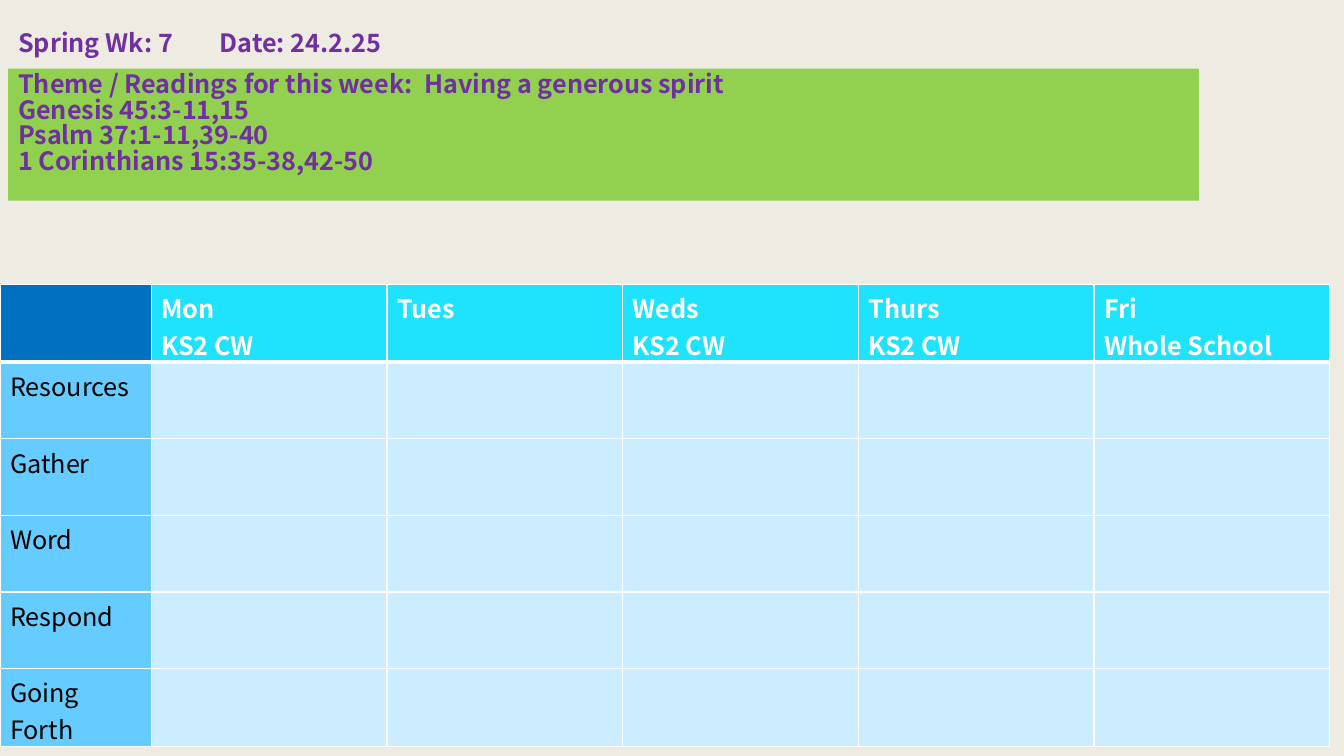
from lxml import etree
from pptx import Presentation, util as u
from pptx.dml.color import RGBColor
from pptx.enum import text as t
from pptx.oxml.ns import qn

HUES = {"page": "EEEBE2", "ink": "7030A0", "theme": "92D050", "white": "FFFFFF",
        "black": "000000", "corner": "0070C0", "day": "1FE3FD",
        "part": "66CCFF", "blank": "CCECFF"}
FONT = "Noto Sans CJK JP"
DAYS = ["Mon\nKS2 CW", "Tues", "Weds\nKS2 CW", "Thurs\nKS2 CW", "Fri\nWhole School"]
PARTS = ["Resources", "Gather", "Word", "Respond", "Going Forth"]
READINGS = ["Theme / Readings for this week:  Having a generous spirit",
            "Genesis 45:3-11,15", "Psalm 37:1-11,39-40", "1 Corinthians 15:35-38,42-50"]


def hue(name):
    return RGBColor.from_string(HUES[name])


def paint(item, name):
    item.fill.solid()
    item.fill.fore_color.rgb = hue(name)


def write(frame, words, color="black", bold=False, pitch=None, tab=None):
    """Fill a frame with one left-aligned, unbulleted paragraph per line."""
    for num, line in enumerate(words.split("\n")):
        para = frame.paragraphs[0] if num == 0 else frame.add_paragraph()
        para.alignment = t.PP_ALIGN.LEFT
        para.space_before = u.Pt(0)
        if pitch:
            para.line_spacing = pitch
        props = para._p.get_or_add_pPr()
        props.set("marL", "0")
        props.set("indent", "0")
        etree.SubElement(props, qn("a:buNone"))
        if tab:
            stops = etree.SubElement(props, qn("a:tabLst"))
            etree.SubElement(stops, qn("a:tab"), pos=str(u.Inches(tab)), algn="l")
        run = para.add_run()
        run.text = line
        font = run.font
        font.name, font.size, font.bold = FONT, u.Pt(18), bold
        font.color.rgb = hue(color)


def place(shape, box):
    shape.left, shape.top, shape.width, shape.height = map(u.Inches, box)
    frame = shape.text_frame
    frame.word_wrap = True
    frame.auto_size = t.MSO_AUTO_SIZE.NONE
    frame.vertical_anchor = t.MSO_ANCHOR.TOP
    return frame


def add_head(slide, box):
    frame = place(slide.shapes.title, box)
    write(frame, "Spring Wk: 7\tDate: 24.2.25", color="ink", bold=True, pitch=0.84, tab=2.44)


def add_theme(slide, box):
    body = slide.placeholders[1]
    paint(body, "theme")
    write(place(body, box), "\n".join(READINGS), color="ink", bold=True, pitch=0.84)


def edge(cell, base):
    """Draw white cell borders, with the bottom one base points wide."""
    props = cell._tc.get_or_add_tcPr()
    for num, (side, wide) in enumerate([("L", 1), ("R", 1), ("T", 1), ("B", base)]):
        line = etree.Element(qn("a:ln" + side), w=str(u.Pt(wide)))
        fill = etree.SubElement(line, qn("a:solidFill"))
        etree.SubElement(fill, qn("a:srgbClr"), val=HUES["white"])
        props.insert(num, line)


def add_plan(slide, box):
    left, top, wide, high = map(u.Inches, box)
    rows, cols = len(PARTS) + 1, len(DAYS) + 1
    grid = slide.shapes.add_table(rows, cols, left, top, wide, high).table
    first = u.Inches(1.5)
    for num, col in enumerate(grid.columns):
        col.width = (wide - first) // len(DAYS) if num else first
    for row in grid.rows:
        row.height = high // rows
    for r in range(rows):
        for c in range(cols):
            cell = grid.cell(r, c)
            cell.margin_bottom = 0
            if r == 0:
                paint(cell, "day" if c else "corner")
                if c:
                    write(cell.text_frame, DAYS[c - 1], color="white", bold=True)
            else:
                paint(cell, "blank" if c else "part")
                if c == 0:
                    write(cell.text_frame, PARTS[r - 1])
            edge(cell, 1 if r else 3)


def main():
    deck = Presentation()
    deck.slide_width, deck.slide_height = u.Inches(13.33), u.Inches(7.5)
    slide = deck.slides.add_slide(deck.slide_layouts[1])
    paint(slide.background, "page")
    add_head(slide, (0.08, 0.27, 12.98, 0.4))
    add_theme(slide, (0.08, 0.68, 11.81, 1.31))
    add_plan(slide, (0, 2.82, 13.19, 4.56))
    deck.save("out.pptx")


if __name__ == "__main__":
    main()
